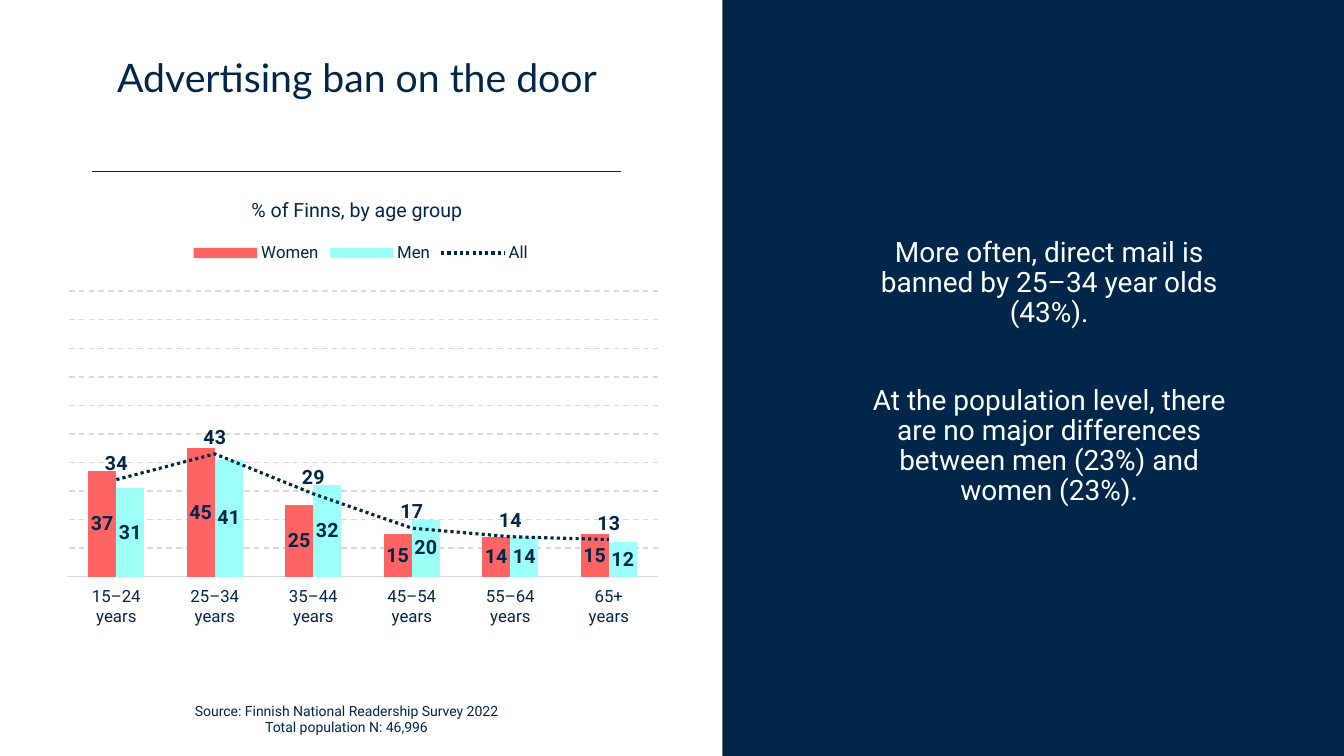
import pptx
import pptx.chart.data
import pptx.dml.color
import pptx.enum.chart
import pptx.enum.dml
import pptx.enum.shapes
import pptx.enum.text
import pptx.oxml
import pptx.oxml.ns
import pptx.util

Pt = pptx.util.Pt
qn = pptx.oxml.ns.qn
MSO_ANCHOR = pptx.enum.text.MSO_ANCHOR
LABEL = pptx.enum.chart.XL_LABEL_POSITION

COLORS = {
    "navy": "002649",
    "white": "FFFFFF",
    "coral": "FF6464",
    "aqua": "9CFFF8",
    "grid": "D9D9D9",
}


def rgb(name):
    return pptx.dml.color.RGBColor.from_string(COLORS[name])


class SlideBuilder:
    heading_font = "Lato"
    body_font = "Roboto"

    def __init__(self, slide):
        self.slide = slide

    def style(self, font, size, color="navy", name=body_font, bold=False):
        font.name, font.size, font.bold = name, Pt(size), bold
        font.color.rgb = rgb(color)

    def panel(self, left, top, width, height, color):
        panel = self.slide.shapes.add_shape(
            pptx.enum.shapes.MSO_SHAPE.RECTANGLE, Pt(left), Pt(top), Pt(width), Pt(height))
        panel.shadow.inherit = False
        panel.fill.solid()
        panel.fill.fore_color.rgb = rgb(color)
        panel.line.fill.background()

    def rule(self, left, right, y):
        rule = self.slide.shapes.add_connector(
            pptx.enum.shapes.MSO_CONNECTOR.STRAIGHT, Pt(left), Pt(y), Pt(right), Pt(y))
        rule.line.color.rgb = rgb("navy")
        rule.line.width = Pt(1)
        pptx.oxml.ns  # namespace map used by the element below
        rule.line._get_or_add_ln().addnext(pptx.oxml.parse_xml(
            f"<a:effectLst {pptx.oxml.ns.nsdecls('a')}/>"))

    def text(self, left, top, width, height, paragraphs, size, color="navy",
             name=body_font, anchor=MSO_ANCHOR.TOP, spacing=1.0, gap=0):
        box = self.slide.shapes.add_textbox(Pt(left), Pt(top), Pt(width), Pt(height))
        frame = box.text_frame
        frame.word_wrap = True
        frame.vertical_anchor = anchor
        frame.text = "\n".join(paragraphs)
        for index, paragraph in enumerate(frame.paragraphs):
            paragraph.alignment = pptx.enum.text.PP_ALIGN.CENTER
            paragraph.line_spacing = spacing
            if index and gap:
                paragraph.space_before = Pt(gap)
            for run in paragraph.runs:
                self.style(run.font, size, color, name)

    def column_line_chart(self, left, top, width, height, categories, columns, line, plot_area):
        """Draw clustered columns with one dotted line on the same axes."""
        data = pptx.chart.data.CategoryChartData()
        data.categories = categories
        for label, values in [column[:2] for column in columns] + [line]:
            data.add_series(label, values)
        chart = self.slide.shapes.add_chart(
            pptx.enum.chart.XL_CHART_TYPE.COLUMN_CLUSTERED,
            Pt(left), Pt(top), Pt(width), Pt(height), data).chart
        self.style(chart.font, 10)
        chart.has_title = False
        self.legend(chart)
        self.axes(chart)
        self.move_last_series_to_line(chart)
        self.set_plot_area(chart, *plot_area)

        bars, trend = chart.plots
        bars.gap_width, bars.overlap = 150, 0
        bars.vary_by_categories = False
        for series, (_, _, color) in zip(bars.series, columns):
            series.format.fill.solid()
            series.format.fill.fore_color.rgb = rgb(color)
            self.value_labels(series, LABEL.CENTER)
        everyone = trend.series[0]
        everyone.smooth = False
        everyone.marker.style = pptx.enum.chart.XL_MARKER_STYLE.NONE
        everyone.format.line.color.rgb = rgb("navy")
        everyone.format.line.width = Pt(2.25)
        everyone.format.line.dash_style = pptx.enum.dml.MSO_LINE.ROUND_DOT
        self.value_labels(everyone, LABEL.ABOVE)

    def legend(self, chart):
        chart.has_legend = True
        chart.legend.position = pptx.enum.chart.XL_LEGEND_POSITION.TOP
        chart.legend.include_in_layout = False
        self.style(chart.legend.font, 12)

    def axes(self, chart):
        ages, percent = chart.category_axis, chart.value_axis
        ages.tick_label_position = pptx.enum.chart.XL_TICK_LABEL_POSITION.LOW
        ages.major_tick_mark = pptx.enum.chart.XL_TICK_MARK.NONE
        ages.format.line.color.rgb = rgb("grid")
        ages.format.line.width = Pt(0.75)
        self.style(ages.tick_labels.font, 12)
        percent.minimum_scale, percent.maximum_scale, percent.major_unit = 0, 100, 10
        percent.visible = False
        grid = percent.major_gridlines.format.line
        grid.color.rgb = rgb("grid")
        grid.width = Pt(1)
        grid.dash_style = pptx.enum.dml.MSO_LINE.DASH

    def value_labels(self, series, position):
        labels = series.data_labels
        labels.show_value = True
        labels.position = position
        self.style(labels.font, 14, bold=True)

    def move_last_series_to_line(self, chart):
        bar_chart = chart.plots[0]._element
        line_chart = pptx.oxml.parse_xml(
            f"<c:lineChart {pptx.oxml.ns.nsdecls('c')}>"
            '<c:grouping val="standard"/><c:varyColors val="0"/><c:marker val="1"/>'
            + "".join(f'<c:axId val="{axis.get("val")}"/>'
                      for axis in bar_chart.findall(qn("c:axId")))
            + "</c:lineChart>")
        series = bar_chart.findall(qn("c:ser"))[-1]
        for invert in series.findall(qn("c:invertIfNegative")):
            series.remove(invert)
        line_chart.insert(2, series)
        bar_chart.addnext(line_chart)

    def set_plot_area(self, chart, x, y, w, h):
        plot_area = chart._chartSpace.find(".//" + qn("c:plotArea"))
        for layout in plot_area.findall(qn("c:layout")):
            plot_area.remove(layout)
        plot_area.insert(0, pptx.oxml.parse_xml(
            f"<c:layout {pptx.oxml.ns.nsdecls('c')}><c:manualLayout>"
            '<c:layoutTarget val="inner"/><c:xMode val="edge"/><c:yMode val="edge"/>'
            f'<c:x val="{x}"/><c:y val="{y}"/><c:w val="{w}"/><c:h val="{h}"/>'
            "</c:manualLayout></c:layout>"))


def main():
    deck = pptx.Presentation()
    deck.slide_width, deck.slide_height = Pt(960), Pt(540)
    page = SlideBuilder(deck.slides.add_slide(deck.slide_layouts[6]))

    page.panel(516, 0, 444, 540, "navy")
    page.rule(66, 443.5, 122.5)
    page.text(66, 32, 378, 50, ["Advertising ban on the door"], 28,
              name=page.heading_font, anchor=MSO_ANCHOR.MIDDLE, spacing=0.9)
    page.text(66, 137.5, 378, 24.5, ["% of Finns, by age group"], 14)
    page.column_line_chart(
        0, 165.5, 515.5, 312.5,
        [f"{age}\nyears" for age in ("15–24", "25–34", "35–44", "45–54", "55–64", "65+")],
        [("Women", (37, 45, 25, 15, 14, 15), "coral"),
         ("Men", (31, 41, 32, 20, 14, 12), "aqua")],
        ("All", (34, 43, 29, 17, 14, 13)),
        plot_area=(0.093, 0.136, 0.819, 0.653))
    page.text(118.5, 498, 258, 32,
              ["Source: Finnish National Readership Survey 2022", "Total population N: 46,996"], 10)
    page.text(605.5, 102, 288, 328,
              ["More often, direct mail is banned by 25–34 year olds (43%).",
               "At the population level, there are no major differences "
               "between men (23%) and women (23%)."],
              20, "white", anchor=MSO_ANCHOR.MIDDLE, spacing=0.9, gap=41)
    deck.save("out.pptx")


if __name__ == "__main__":
    main()
